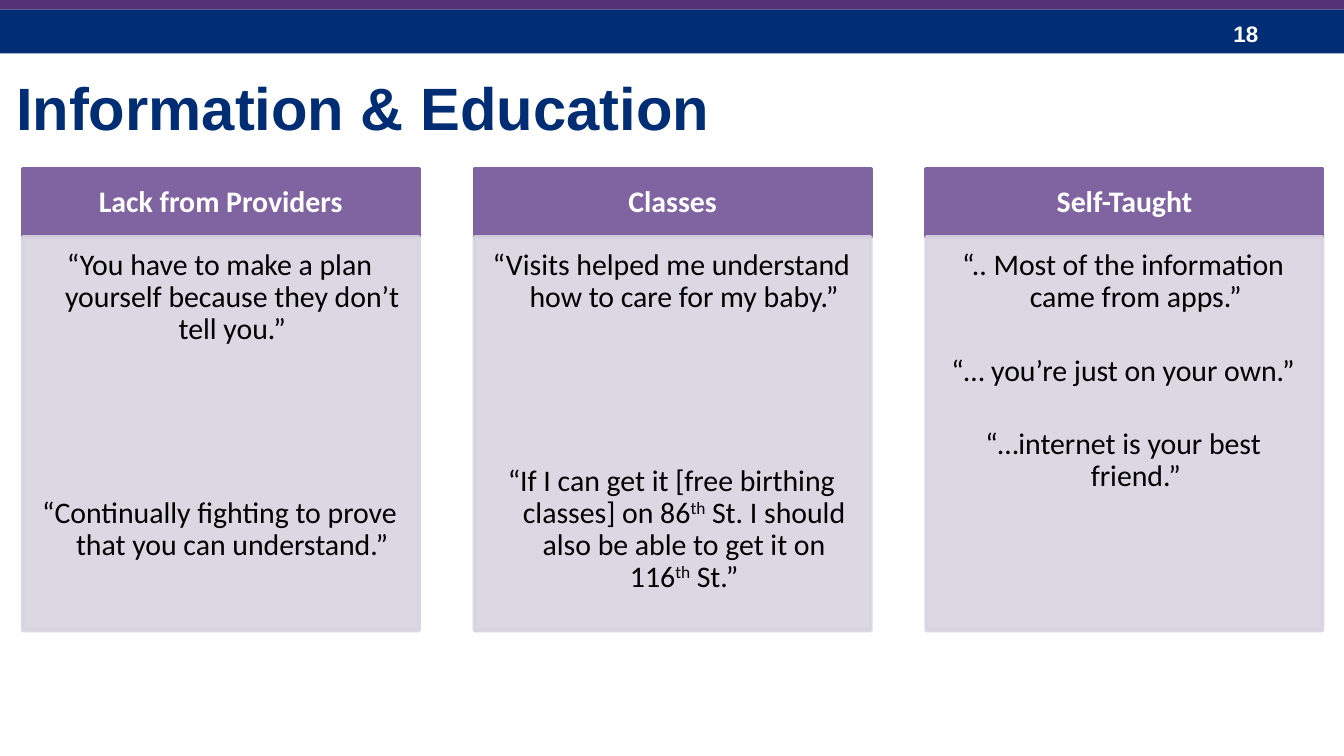
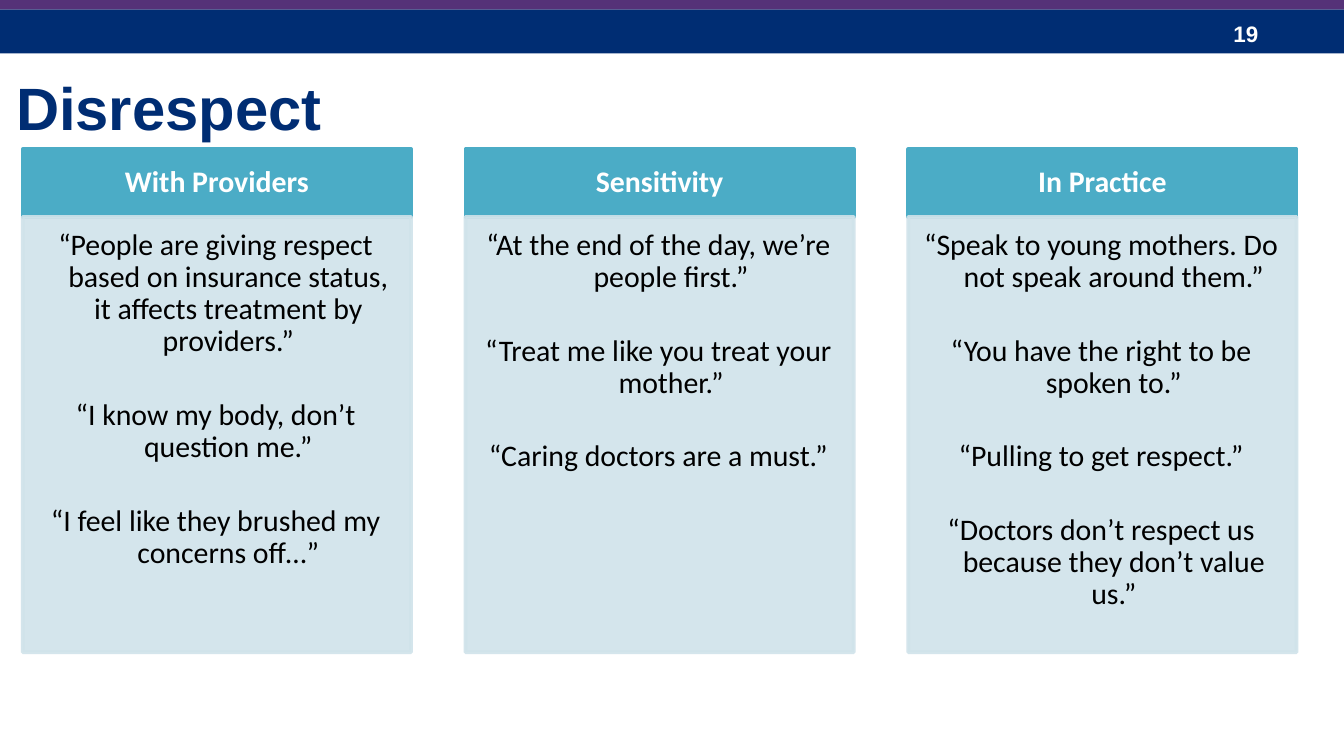
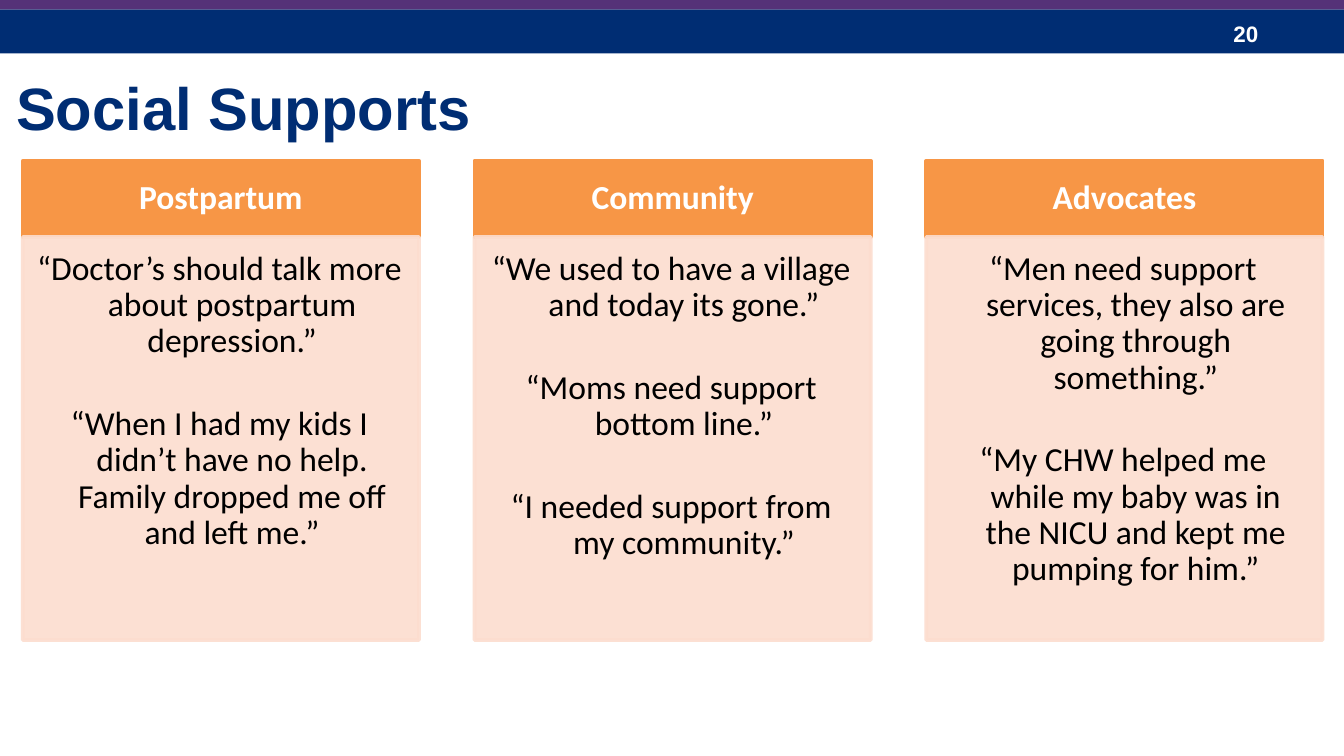
from dataclasses import dataclass

from lxml.etree import SubElement
from pptx import Presentation
from pptx.dml.color import RGBColor
from pptx.enum.shapes import MSO_SHAPE
from pptx.enum.text import MSO_ANCHOR, MSO_AUTO_SIZE, PP_ALIGN
from pptx.oxml.ns import qn
from pptx.util import Cm, Pt

NAVY = RGBColor(0x00, 0x2D, 0x73)
PLUM = RGBColor(0x55, 0x32, 0x78)
WHITE = RGBColor(0xFF, 0xFF, 0xFF)
BLACK = RGBColor(0x00, 0x00, 0x00)
VIOLET = RGBColor(0x80, 0x64, 0xA2)
PALE_VIOLET = RGBColor(0xD8, 0xD3, 0xE0)
TEAL = RGBColor(0x4B, 0xAC, 0xC6)
PALE_TEAL = RGBColor(0xD0, 0xE3, 0xEA)
ORANGE = RGBColor(0xF7, 0x96, 0x46)
PALE_ORANGE = RGBColor(0xFC, 0xDD, 0xCF)

TITLE_FONT = "Arial"
COLUMN_FONT = "Calibri"
SLIDE_WIDTH, SLIDE_HEIGHT = 25.4, 14.29
TITLE_ONLY_LAYOUT = 5
FIRST_PAGE_NUMBER = 18
COLUMNS_LEFT = 0.43
COLUMN_PITCH = 1.14  # times the column width
QUOTE_INDENT = Cm(0.48)


@dataclass
class Column:
    heading: str
    quotes: list
    blank_lines: int = 1


@dataclass
class QuoteSlide:
    title: str
    dark: RGBColor
    pale: RGBColor
    top: float
    column_width: float
    body_height: float
    text_size: int
    columns: list


QUOTE_SLIDES = [
    QuoteSlide("Information & Education", VIOLET, PALE_VIOLET, 3.2, 7.49, 7.44, 16, [
        Column("Lack from Providers", [
            "“You have to make a plan yourself because they don’t tell you.”",
            "“Continually fighting to prove that you can understand.”",
        ], blank_lines=4),
        Column("Classes", [
            "“Visits helped me understand how to care for my baby.”",
            "“If I can get it [free birthing classes] on 86^th^ St. "
            "I should also be able to get it on 116^th^ St.”",
        ], blank_lines=4),
        Column("Self-Taught", [
            "“.. Most of the information came from apps.”",
            "“… you’re just on your own.”",
            "“…internet is your best friend.”",
        ]),
    ]),
    QuoteSlide("Disrespect", TEAL, PALE_TEAL, 2.82, 7.34, 8.23, 16, [
        Column("With Providers", [
            "“People are giving respect based on insurance status, "
            "it affects treatment by providers.”",
            "“I know my body, don’t question me.”",
            "“I feel like they brushed my concerns off…”",
        ]),
        Column("Sensitivity", [
            "“At the end of the day, we’re people first.”",
            "“Treat me like you treat your mother.”",
            "“Caring doctors are a must.”",
        ]),
        Column("In Practice", [
            "“Speak to young mothers. Do not speak around them.”",
            "“You have the right to be spoken to.”",
            "“Pulling to get respect.”",
            "“Doctors don’t respect us because they don’t value us.”",
        ]),
    ]),
    QuoteSlide("Social Supports", ORANGE, PALE_ORANGE, 3.04, 7.49, 7.62, 18, [
        Column("Postpartum", [
            "“Doctor’s should talk more about postpartum depression.”",
            "“When I had my kids I didn’t have no help. "
            "Family dropped me off and left me.”",
        ]),
        Column("Community", [
            "“We used to have a village and today its gone.”",
            "“Moms need support bottom line.”",
            "“I needed support from my community.”",
        ]),
        Column("Advocates", [
            "“Men need support services, they also are going through something.”",
            "“My CHW helped me while my baby was in the NICU "
            "and kept me pumping for him.”",
        ]),
    ]),
]


def add_rectangle(slide, left, top, width, height, color):
    shape = slide.shapes.add_shape(
        MSO_SHAPE.RECTANGLE, Cm(left), Cm(top), Cm(width), Cm(height))
    shape.shadow.inherit = False
    shape.fill.solid()
    shape.fill.fore_color.rgb = color
    shape.line.fill.background()
    return shape


def outline(shape, color):
    shape.line.color.rgb = color
    shape.line.width = Pt(2)


def set_opacity(shape, percent):
    """Apply the opacity to both the fill and the outline."""
    for color in shape._element.spPr.iter(qn("a:srgbClr")):
        SubElement(color, qn("a:alpha"), val=str(percent * 1000))


def set_insets(text_frame, left, top, right, bottom):
    text_frame.margin_left, text_frame.margin_top = Cm(left), Cm(top)
    text_frame.margin_right, text_frame.margin_bottom = Cm(right), Cm(bottom)


def add_run(paragraph, text, font_name, size, color, bold=False):
    run = paragraph.add_run()
    run.text = text
    run.font.name = font_name
    run.font.size = Pt(size)
    run.font.bold = bold
    run.font.color.rgb = color
    return run


def add_bands(slide, page_number):
    add_rectangle(slide, 0, 0.18, SLIDE_WIDTH, 0.83, NAVY)
    add_rectangle(slide, 0, -0.05, SLIDE_WIDTH, 0.23, PLUM)
    number_box = slide.shapes.add_textbox(Cm(23.06), Cm(0.25), Cm(1.9), Cm(0.76))
    number_box.text_frame.word_wrap = True
    add_run(number_box.text_frame.paragraphs[0], str(page_number),
            TITLE_FONT, 12, WHITE, bold=True)


def set_title(slide, text):
    title = slide.shapes.title
    title.left, title.top, title.width, title.height = (
        Cm(0.05), Cm(1.22), Cm(24.13), Cm(1.63))
    text_frame = title.text_frame
    text_frame.auto_size = MSO_AUTO_SIZE.NONE
    text_frame.vertical_anchor = MSO_ANCHOR.TOP
    paragraph = text_frame.paragraphs[0]
    paragraph.alignment = PP_ALIGN.LEFT
    add_run(paragraph, text, TITLE_FONT, 32, NAVY, bold=True)


def add_heading(slide, left, top, width, height, text, size, color):
    shape = add_rectangle(slide, left, top, width, height, color)
    outline(shape, color)
    text_frame = shape.text_frame
    text_frame.word_wrap = True
    text_frame.vertical_anchor = MSO_ANCHOR.MIDDLE
    set_insets(text_frame, 0.018 * size, 0.01 * size, 0.018 * size, 0.01 * size)
    paragraph = text_frame.paragraphs[0]
    paragraph.alignment = PP_ALIGN.CENTER
    paragraph.line_spacing = 0.9
    add_run(paragraph, text, COLUMN_FONT, size, WHITE, bold=True)


def add_quote(paragraph, quote, size):
    """Write a quote; the parts between carets are superscript."""
    paragraph.level = 1
    paragraph.alignment = PP_ALIGN.CENTER
    paragraph.line_spacing = 0.9
    properties = paragraph._p.get_or_add_pPr()
    properties.set("marL", str(QUOTE_INDENT))
    properties.set("indent", str(-QUOTE_INDENT))
    for index, part in enumerate(quote.split("^")):
        run = add_run(paragraph, part, COLUMN_FONT, size, BLACK)
        if index % 2:
            run._r.get_or_add_rPr().set("baseline", "30000")


def add_quotes(slide, left, top, width, height, column, size, color):
    shape = add_rectangle(slide, left, top, width, height, color)
    outline(shape, color)
    set_opacity(shape, 90)
    text_frame = shape.text_frame
    text_frame.word_wrap = True
    text_frame.vertical_anchor = MSO_ANCHOR.TOP
    set_insets(text_frame, 0.015 * size, 0.015 * size, 0.018 * size, 0.022 * size)
    line_height, line_gap = 1.08 * size, 0.15 * size
    quote_gap = column.blank_lines * (line_height + line_gap) + line_gap
    for index, quote in enumerate(column.quotes):
        paragraph = text_frame.add_paragraph() if index else text_frame.paragraphs[0]
        add_quote(paragraph, quote, size)
        if index:
            paragraph.space_before = Pt(round(quote_gap, 1))


def add_quote_slide(presentation, content, page_number):
    slide = presentation.slides.add_slide(
        presentation.slide_layouts[TITLE_ONLY_LAYOUT])
    add_bands(slide, page_number)
    set_title(slide, content.title)
    size, width = content.text_size, content.column_width
    heading_height = 0.08 * size
    for index, column in enumerate(content.columns):
        left = COLUMNS_LEFT + index * COLUMN_PITCH * width
        add_heading(slide, left, content.top, width, heading_height,
                    column.heading, size, content.dark)
        add_quotes(slide, left, content.top + heading_height, width,
                   content.body_height, column, size, content.pale)


def main():
    presentation = Presentation()
    presentation.slide_width = Cm(SLIDE_WIDTH)
    presentation.slide_height = Cm(SLIDE_HEIGHT)
    for page_number, content in enumerate(QUOTE_SLIDES, FIRST_PAGE_NUMBER):
        add_quote_slide(presentation, content, page_number)
    presentation.save("out.pptx")


if __name__ == "__main__":
    main()
